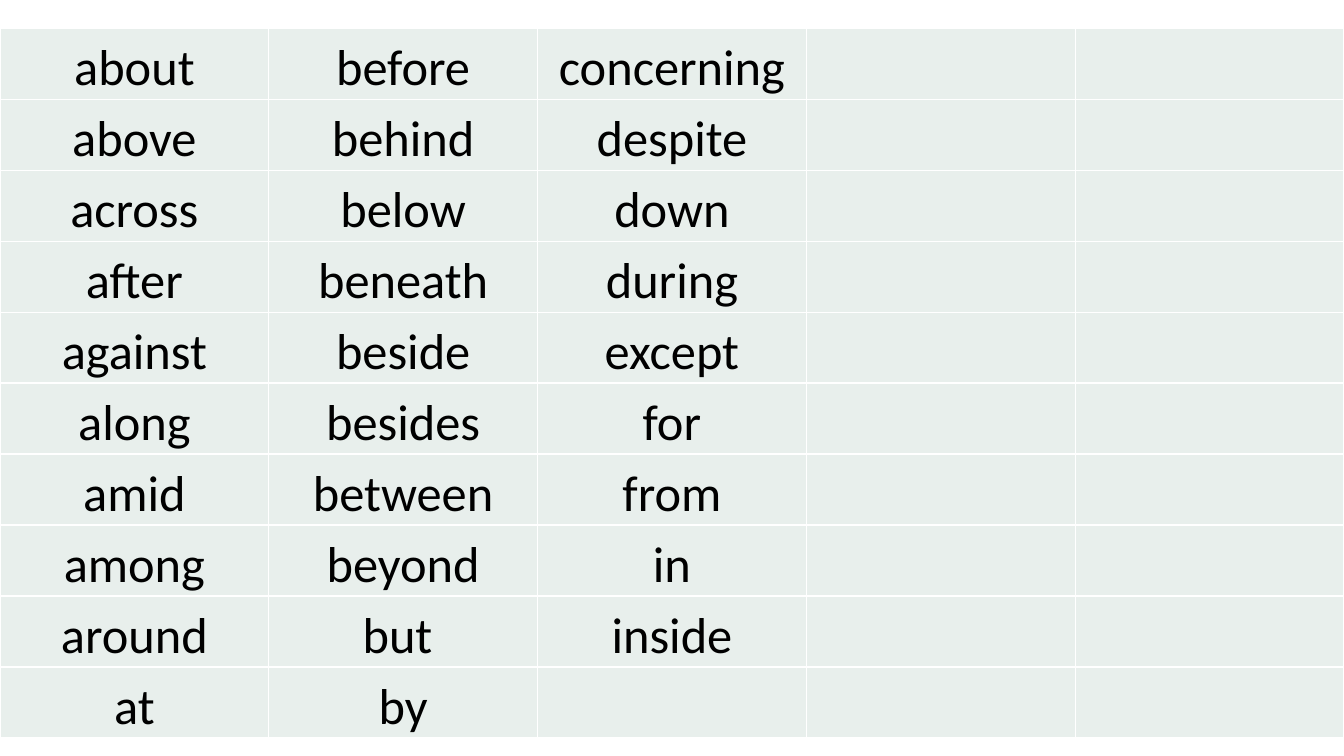
from lxml.etree import SubElement
from pptx import Presentation
from pptx.dml.color import RGBColor
from pptx.enum.text import PP_ALIGN
from pptx.oxml.ns import qn
from pptx.util import Pt


def color(hex_code):
    return RGBColor.from_string(hex_code)


def add_borders(cell, hex_code, width):
    properties = cell._tc.get_or_add_tcPr()
    for position, side in enumerate(("a:lnL", "a:lnR", "a:lnT", "a:lnB")):
        line = SubElement(properties, qn(side), w=str(Pt(width)))
        fill = SubElement(line, qn("a:solidFill"))
        SubElement(fill, qn("a:srgbClr"), val=hex_code)
        properties.insert(position, line)  # borders precede the cell fill


# Prepositions, one list per column; the last two columns stay empty
prepositions = [
    ["about", "above", "across", "after", "against",
     "along", "amid", "among", "around", "at"],
    ["before", "behind", "below", "beneath", "beside",
     "besides", "between", "beyond", "but ", "by"],
    ["concerning", "despite", "down", "during", "except",
     "for", "from", "in", "inside"],
    [],
    [],
]
row_count = 10
row_height = 50.25

# Slide
deck = Presentation()
deck.slide_width, deck.slide_height = Pt(960), Pt(540)
slide = deck.slides.add_slide(deck.slide_layouts[6])

# Word grid
word_grid = slide.shapes.add_table(
    row_count, len(prepositions), Pt(0), Pt(20.2), Pt(960), Pt(row_count * row_height)
).table
word_grid.first_row = False
word_grid.horz_banding = False

# Cell styling and words
for column, words in enumerate(prepositions):
    for row in range(row_count):
        cell = word_grid.cell(row, column)
        cell.fill.solid()
        cell.fill.fore_color.rgb = color("E8EFEC")
        add_borders(cell, "FFFFFF", 1)
        if row >= len(words):
            continue
        cell.margin_left = cell.margin_right = Pt(5)
        cell.margin_top = cell.margin_bottom = Pt(0)
        paragraph = cell.text_frame.paragraphs[0]
        paragraph.text = words[row]
        paragraph.alignment = PP_ALIGN.CENTER
        paragraph.line_spacing = 1.15
        font = paragraph.runs[0].font
        font.name = "Calibri"
        font.size = Pt(36)
        font.color.rgb = color("000000")

deck.save("out.pptx")
